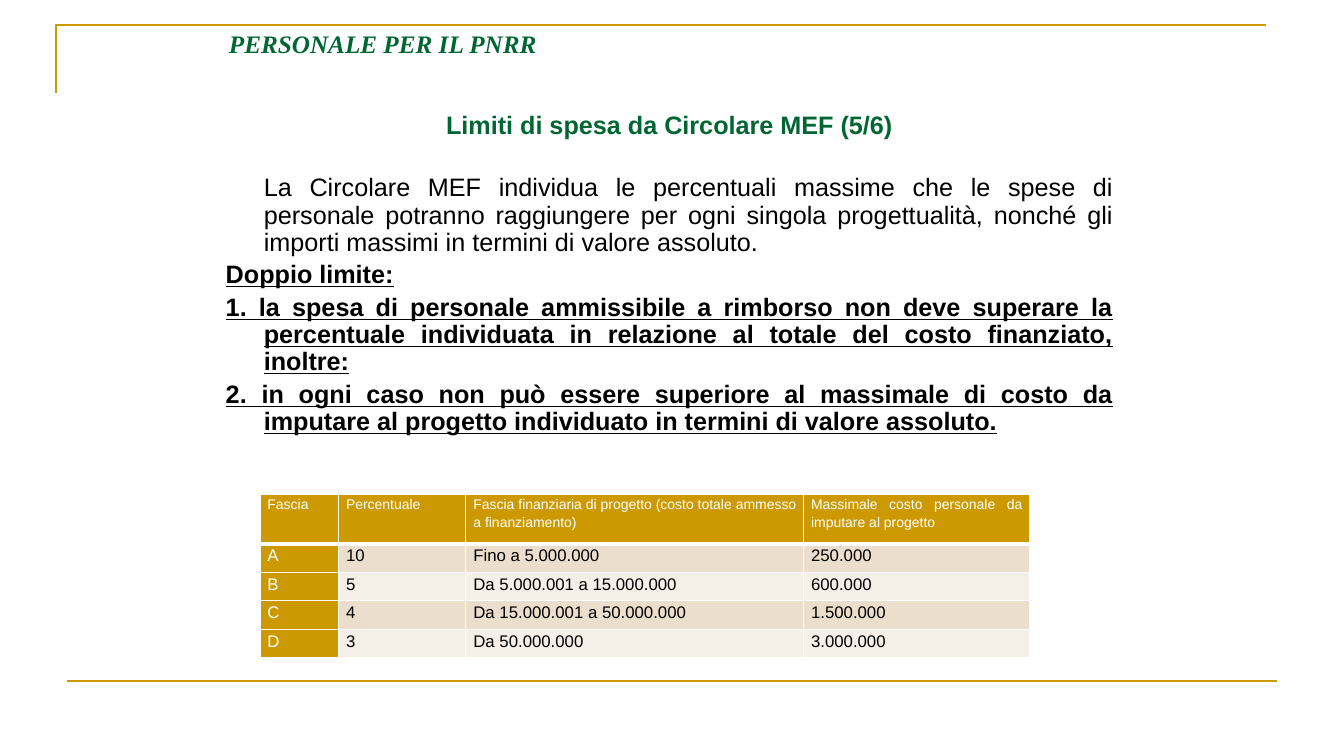
from lxml import etree
from pptx import Presentation
from pptx import util as u
from pptx.dml.color import RGBColor
from pptx.enum import shapes, text
from pptx.oxml import ns

GOLD = RGBColor(0xCC, 0x99, 0x00)
GREEN = RGBColor(0x00, 0x66, 0x33)
BLACK = RGBColor(0x00, 0x00, 0x00)
WHITE = RGBColor(0xFF, 0xFF, 0xFF)
SAND = RGBColor(0xEC, 0xDE, 0xCC)
CREAM = RGBColor(0xF6, 0xEF, 0xE7)

LEFT, CENTER, JUSTIFY = (
    text.PP_ALIGN.LEFT, text.PP_ALIGN.CENTER, text.PP_ALIGN.JUSTIFY)
HANGING = u.Cm(0.96)

INTRO = ("La Circolare MEF individua le percentuali massime che le spese di "
         "personale potranno raggiungere per ogni singola progettualità, "
         "nonché gli importi massimi in termini di valore assoluto.")
LIMITS = [
    "Doppio limite:",
    "1. la spesa di personale ammissibile a rimborso non deve superare la "
    "percentuale individuata in relazione al totale del costo finanziato, "
    "inoltre:",
    "2. in ogni caso non può essere superiore al massimale di costo da "
    "imputare al progetto individuato in termini di valore assoluto.",
]
BANDS = [
    ["Fascia", "Percentuale",
     "Fascia finanziaria di progetto (costo totale ammesso a finanziamento)",
     "Massimale costo personale da imputare al progetto"],
    ["A", "10", "Fino a 5.000.000", "250.000"],
    ["B", "5", "Da 5.000.001 a 15.000.000", "600.000"],
    ["C", "4", "Da 15.000.001 a 50.000.000", "1.500.000"],
    ["D", "3", "Da 50.000.000", "3.000.000"],
]


class Slide:
    font = "Arial"
    size = 18
    rule_width = u.Pt(1.5)

    def __init__(self, deck):
        self.page = deck.slides.add_slide(deck.slide_layouts[6])

    def style_line(self, line):
        line.color.rgb = GOLD
        line.width = self.rule_width

    def corner(self, left, top, right, bottom):
        builder = self.page.shapes.build_freeform(u.Cm(left), u.Cm(bottom))
        builder.add_line_segments(
            [(u.Cm(left), u.Cm(top)), (u.Cm(right), u.Cm(top))], close=False)
        outline = builder.convert_to_shape()
        outline.shadow.inherit = False
        outline.fill.background()
        self.style_line(outline.line)

    def rule(self, left, right, top):
        line = self.page.shapes.add_connector(
            shapes.MSO_CONNECTOR.STRAIGHT,
            u.Cm(left), u.Cm(top), u.Cm(right), u.Cm(top))
        etree.SubElement(line._element.spPr, ns.qn("a:effectLst"))
        self.style_line(line.line)

    def box(self, left, top, width, height):
        frame = self.page.shapes.add_textbox(
            u.Cm(left), u.Cm(top), u.Cm(width), u.Cm(height)).text_frame
        frame.word_wrap = True
        return frame

    def fill_para(self, para, words, color, align, size=None, font=None,
                  bold=False, italic=False, underline=False):
        para.text = words
        para.alignment = align
        para.font.name = font or self.font
        para.font.size = u.Pt(size or self.size)
        para.font.color.rgb = color
        para.font.bold = bold
        para.font.italic = italic
        para.font.underline = underline

    def body_para(self, frame, words, color=BLACK, align=JUSTIFY, before=3.8,
                  first=False, hanging=True, **style):
        para = frame.paragraphs[0] if first else frame.add_paragraph()
        self.fill_para(para, words, color, align, **style)
        para.line_spacing = 0.9
        para.space_before = u.Pt(before)
        properties = para._p.get_or_add_pPr()
        properties.set("marL", str(HANGING))
        properties.set("indent", str(-HANGING if hanging else 0))

    def borders(self, cell, row):
        widths = {"lnL": 1, "lnR": 1, "lnT": 3 if row == 1 else 1,
                  "lnB": 3 if row == 0 else 1}
        properties = cell._tc.get_or_add_tcPr()
        for place, (side, width) in enumerate(widths.items()):
            line = etree.Element(ns.qn("a:" + side), w=str(u.Pt(width)))
            fill = etree.SubElement(line, ns.qn("a:solidFill"))
            etree.SubElement(fill, ns.qn("a:srgbClr"), val=str(WHITE))
            properties.insert(place, line)

    def table(self, rows, left, top, widths, heights):
        grid = self.page.shapes.add_table(
            len(rows), len(widths), u.Cm(left), u.Cm(top),
            u.Cm(sum(widths)), u.Cm(sum(heights))).table
        for column, width in zip(grid.columns, widths):
            column.width = u.Cm(width)
        for row, height in zip(grid.rows, heights):
            row.height = u.Cm(height)
        for i, row in enumerate(rows):
            for j, words in enumerate(row):
                cell = grid.cell(i, j)
                heading = i == 0 or j == 0
                cell.margin_left = cell.margin_right = u.Cm(0.19)
                cell.margin_top = cell.margin_bottom = 0
                cell.fill.solid()
                cell.fill.fore_color.rgb = (
                    GOLD if heading else SAND if i % 2 else CREAM)
                self.borders(cell, i)
                para = cell.text_frame.paragraphs[0]
                self.fill_para(para, words, WHITE if heading else BLACK,
                               JUSTIFY, size=12 if i else 10)
                para.line_spacing = 1.15
                para.space_after = u.Pt(10)


def main():
    deck = Presentation()
    deck.slide_width, deck.slide_height = u.Cm(33.87), u.Cm(19.05)
    slide = Slide(deck)

    slide.corner(1.42, 0.64, 31.9, 2.34)
    slide.rule(1.7, 32.18, 17.15)

    title = slide.box(5.52, 0.58, 22.86, 1.5)
    slide.fill_para(title.paragraphs[0], "PERSONALE PER IL PNRR", GREEN, LEFT,
                    font="Times New Roman", bold=True, italic=True)

    body = slide.box(5.44, 2.72, 22.86, 12.09)
    slide.body_para(body, "Limiti di spesa da Circolare MEF (5/6)", GREEN,
                    CENTER, before=0, first=True, bold=True)
    slide.body_para(body, INTRO, before=25, hanging=False)
    for limit in LIMITS:
        slide.body_para(body, limit, bold=True, underline=True)

    slide.table(BANDS, 6.55, 12.45, [1.98, 3.21, 8.51, 5.7],
                [1.25] + [0.72] * 4)
    deck.save("out.pptx")


if __name__ == "__main__":
    main()
